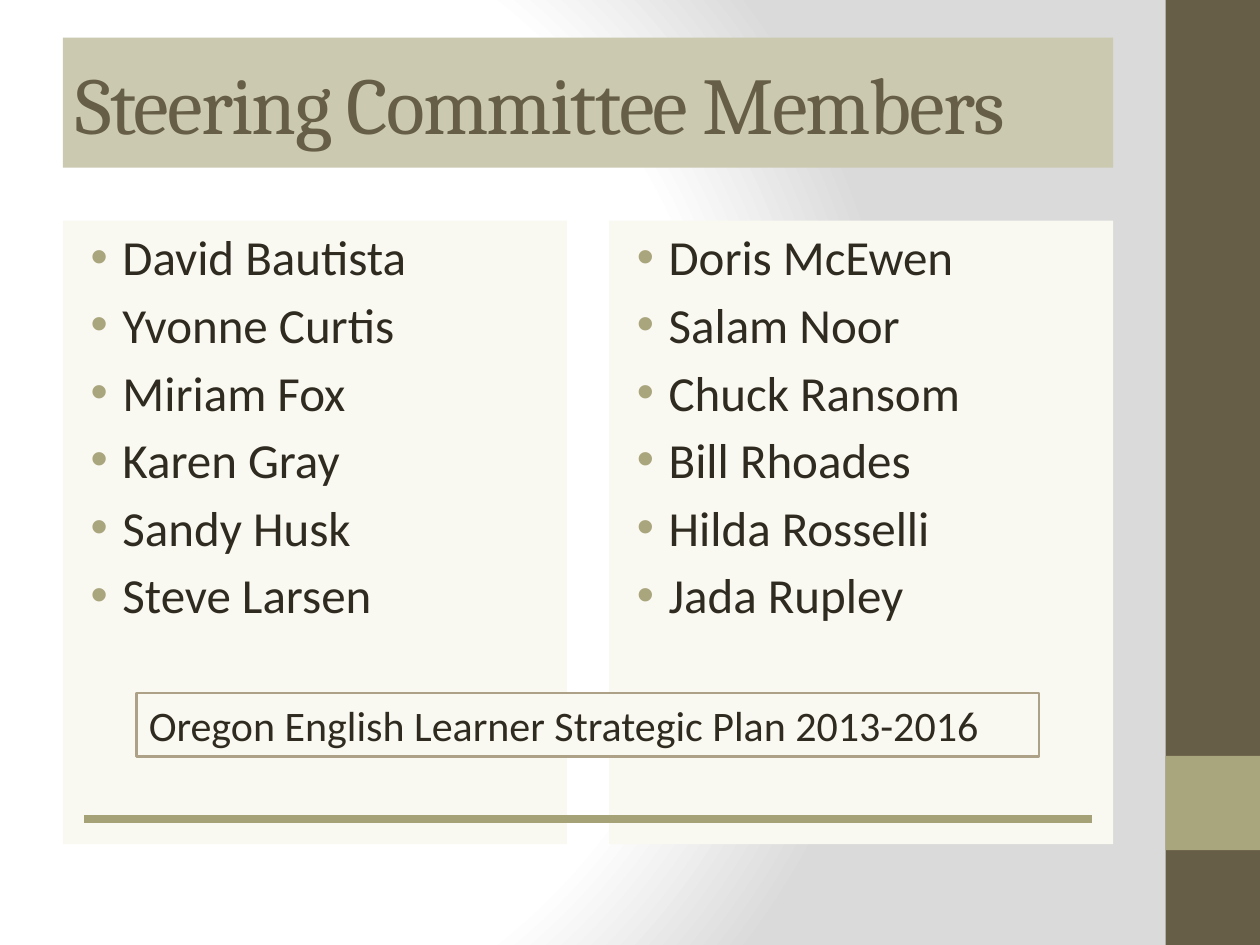
from pptx import Presentation
from pptx.dml.color import RGBColor
from pptx.enum.shapes import MSO_CONNECTOR, MSO_SHAPE
from pptx.enum.text import MSO_ANCHOR, PP_ALIGN
from pptx.oxml import parse_xml
from pptx.oxml.ns import nsdecls
from pptx.util import Cm, Pt

RECT, STRAIGHT = MSO_SHAPE.RECTANGLE, MSO_CONNECTOR.STRAIGHT
TOP, MIDDLE, LEFT = MSO_ANCHOR.TOP, MSO_ANCHOR.MIDDLE, PP_ALIGN.LEFT

BROWN = RGBColor(0x67, 0x5E, 0x47)
OLIVE = RGBColor(0xA9, 0xA5, 0x7C)
BAND = RGBColor(0xCB, 0xC9, 0xB0)
CREAM = RGBColor(0xF9, 0xF8, 0xF1)
INK = RGBColor(0x2F, 0x2B, 0x20)
RULE = RGBColor(0xA6, 0xA2, 0x78)
FRAME = RGBColor(0xAD, 0xA2, 0x88)

TITLE = "Steering Committee Members"
MEMBERS = [
    ["David Bautista", "Yvonne Curtis", "Miriam Fox",
     "Karen Gray", "Sandy Husk", "Steve Larsen"],
    ["Doris McEwen", "Salam Noor", "Chuck Ransom",
     "Bill Rhoades", "Hilda Rosselli", "Jada Rupley"],
]
PLAN = "Oregon English Learner Strategic Plan 2013-2016"
STOPS = [(0, "FFFFFF"), (75, "FFFFFF"), (100, "DADADA")]

# Lengths in centimetres
SLIDE_W, SLIDE_H = 25.4, 19.05
MARGIN, CONTENT_W = 1.27, 21.17
COLUMN_W = 10.16
SIDE_X, SIDE_W = 23.5, 1.9


def add_background(s):
    stops = "".join(f'<a:gs pos="{pos * 1000}"><a:srgbClr val="{color}"/></a:gs>'
                    for pos, color in STOPS)
    s._element.cSld.insert(0, parse_xml(
        f'<p:bg {nsdecls("p", "a")}><p:bgPr><a:gradFill rotWithShape="1">'
        f'<a:gsLst>{stops}</a:gsLst><a:path path="circle">'
        '<a:fillToRect l="20000" t="50000" r="100000" b="50000"/></a:path>'
        '</a:gradFill><a:effectLst/></p:bgPr></p:bg>'))


def add_rect(s, x, y, w, h, fill, anchor=TOP):
    sp = s.shapes.add_shape(RECT, Cm(x), Cm(y), Cm(w), Cm(h))
    sp.shadow.inherit = False
    sp.fill.solid()
    sp.fill.fore_color.rgb = fill
    sp.line.fill.background()
    sp.text_frame.word_wrap = True
    sp.text_frame.vertical_anchor = anchor
    return sp


def add_run(p, text, size, font="Calibri", color=INK):
    p.alignment = LEFT
    r = p.add_run()
    r.text = text
    r.font.size, r.font.name = Pt(size), font
    r.font.color.rgb = color
    return r


def add_bullet(p):
    pPr = p._p.get_or_add_pPr()
    pPr.set("marL", str(Cm(0.95)))
    pPr.set("indent", str(Cm(-0.64)))
    for xml in (f'<a:buClr {nsdecls("a")}><a:srgbClr val="{OLIVE}"/></a:buClr>',
                f'<a:buFont {nsdecls("a")} typeface="Arial"/>',
                f'<a:buChar {nsdecls("a")} char="•"/>'):
        pPr.append(parse_xml(xml))


def add_members(s, x, names):
    tf = add_rect(s, x, 4.45, COLUMN_W, 12.57, CREAM).text_frame
    for i, name in enumerate(names):
        p = tf.add_paragraph() if i else tf.paragraphs[0]
        add_bullet(p)
        if i:
            p.space_before = Pt(5)
        add_run(p, name, 28)


def main():
    prs = Presentation()
    prs.slide_width, prs.slide_height = Cm(SLIDE_W), Cm(SLIDE_H)
    s = prs.slides.add_slide(prs.slide_layouts[6])
    add_background(s)
    add_rect(s, SIDE_X, 0, SIDE_W, SLIDE_H, BROWN)
    add_rect(s, SIDE_X, 15.24, SIDE_W, SIDE_W, OLIVE)

    title = add_rect(s, MARGIN, 0.76, CONTENT_W, 2.62, BAND, MIDDLE)
    r = add_run(title.text_frame.paragraphs[0], TITLE, 46, "Cambria", BROWN)
    r._r.get_or_add_rPr().set("spc", "-100")

    step = CONTENT_W - COLUMN_W
    for i, names in enumerate(MEMBERS):
        add_members(s, MARGIN + i * step, names)

    rule = s.shapes.add_connector(STRAIGHT, Cm(1.69), Cm(16.51), Cm(22.01), Cm(16.51))
    rule.line.color.rgb = RULE
    rule.line.width = Pt(4.5)
    rule._element.spPr.append(parse_xml(f'<a:effectLst {nsdecls("a")}/>'))

    plan = add_rect(s, 2.75, 13.97, 18.2, 1.28, CREAM)
    plan.line.color.rgb = FRAME
    plan.line.width = Pt(1.5)
    add_run(plan.text_frame.paragraphs[0], PLAN, 24)

    prs.save("out.pptx")


if __name__ == "__main__":
    main()
